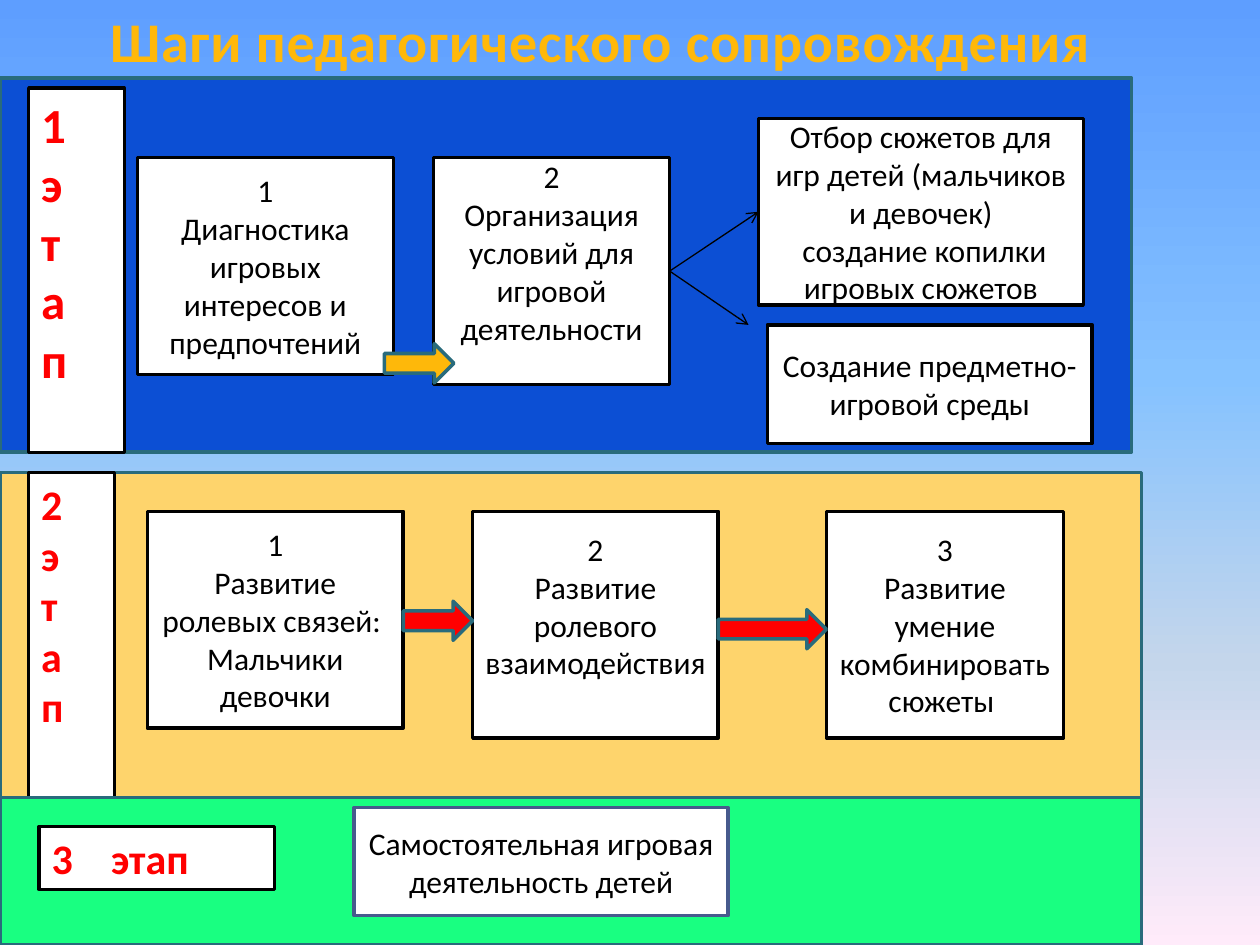
from lxml.etree import SubElement
from pptx import Presentation
from pptx.dml.color import RGBColor
from pptx.enum.shapes import MSO_CONNECTOR, MSO_SHAPE
from pptx.enum.text import MSO_ANCHOR as Anchor, MSO_AUTO_SIZE as AutoSize, PP_ALIGN as Align
from pptx.oxml.ns import qn
from pptx.util import Cm, Pt

FONT = "Calibri"
WHITE, BLACK, RED = "FFFFFF", "000000", "FF0000"
TEAL, AMBER = "296B7C", "FEB80A"
ROW_1, ROW_2 = 3.18, 10.31  # tops of the step rows
ARROW_HEIGHT = 0.79
RIGHT, LEFT = 3, 1  # connection sites


def color(hex_string):
    return RGBColor.from_string(hex_string)


def set_gradient(fill, owner, stops):
    """Vertical gradient with any number of (percent, colour) stops."""
    fill.gradient()
    fill.gradient_angle = 270
    stop_list = next(owner.iter(qn("a:gsLst")))
    for stop in list(stop_list):
        stop_list.remove(stop)
    for percent, value in stops:
        stop = SubElement(stop_list, qn("a:gs"), pos=str(percent * 1000))
        SubElement(stop, qn("a:srgbClr"), val=value)


def format_text(paragraph, size, value, bold=False):
    for run in paragraph.runs:
        run.font.name = FONT
        run.font.size = Pt(size)
        run.font.bold = bold
        run.font.color.rgb = color(value)


def add_block(slide, place, fill, line, kind=MSO_SHAPE.RECTANGLE):
    block = slide.shapes.add_shape(kind, *map(Cm, place))
    block.shadow.inherit = False
    block.fill.solid()
    block.fill.fore_color.rgb = color(fill)
    block.line.color.rgb = color(line)
    block.line.width = Pt(2)
    return block


def add_step(slide, place, lines, line=BLACK, bottom=0.13):
    """White box with centred lines; a larger bottom inset lifts the text."""
    step = add_block(slide, place, WHITE, line)
    frame = step.text_frame
    frame.word_wrap = True
    frame.vertical_anchor = Anchor.MIDDLE
    frame.margin_bottom = Cm(bottom)
    frame.text = "\n".join(lines)
    for paragraph in frame.paragraphs:
        paragraph.alignment = Align.CENTER
        format_text(paragraph, 18, BLACK)
    return step


def add_stage_label(slide, place, text, size, stacked=True):
    label = add_block(slide, place, WHITE, BLACK)
    frame = label.text_frame
    frame.word_wrap = True
    frame.auto_size = AutoSize.SHAPE_TO_FIT_TEXT
    frame.vertical_anchor = Anchor.TOP
    frame.text = text
    paragraph = frame.paragraphs[0]
    paragraph.alignment = Align.LEFT
    format_text(paragraph, size, RED, bold=True)
    if stacked:
        next(label.element.iter(qn("a:bodyPr"))).set("vert", "wordArtVert")
    else:
        properties = next(label.element.iter(qn("a:pPr")))
        tabs = SubElement(properties, qn("a:tabLst"))
        SubElement(tabs, qn("a:tab"), pos=str(Cm(1.2)), algn="l")


def add_step_arrow(slide, left, top, width, fill):
    add_block(slide, (left, top, width, ARROW_HEIGHT), fill, TEAL, MSO_SHAPE.RIGHT_ARROW)


def add_branch(slide, source, end_x, end_y, target=None):
    branch = slide.shapes.add_connector(
        MSO_CONNECTOR.STRAIGHT, source.left + source.width,
        source.top + source.height // 2, Cm(end_x), Cm(end_y))
    branch.begin_connect(source, RIGHT)
    if target is not None:
        branch.end_connect(target, LEFT)
    branch.line.color.rgb = color(BLACK)
    branch.line.width = Pt(0.75)
    properties = branch.element.spPr
    SubElement(properties.find(qn("a:ln")), qn("a:tailEnd"), type="arrow")
    SubElement(properties, qn("a:effectLst"))


def add_title(slide):
    title = slide.shapes.add_textbox(Cm(0), Cm(0), Cm(24.21), Cm(1.63))
    frame = title.text_frame
    frame.word_wrap = True
    frame.auto_size = AutoSize.SHAPE_TO_FIT_TEXT
    frame.text = "Шаги педагогического сопровождения"
    paragraph = frame.paragraphs[0]
    paragraph.alignment = Align.CENTER
    format_text(paragraph, 32, AMBER, bold=True)
    run = paragraph.runs[0]
    set_gradient(run.font.fill, title.element, [(25, "FFB809"), (100, "BB8500")])
    next(title.element.iter(qn("a:rPr"))).set("spc", "50")


def add_stage_1(slide):
    add_block(slide, (0, 1.57, 22.81, 7.54), "0C4FD4", TEAL)
    add_title(slide)
    add_step(slide, (2.77, ROW_1, 5.16, 4.37),
             ["1", "Диагностика игровых интересов и предпочтений"])
    conditions = add_step(slide, (8.74, ROW_1, 4.76, 4.57),
                          ["2", "Организация условий для игровой деятельности"], bottom=0.9)
    plots = add_step(slide, (15.29, 2.39, 6.55, 3.76),
                     ["Отбор сюжетов для игр детей (мальчиков и девочек)",
                      " создание копилки игровых сюжетов"])
    add_step(slide, (15.47, 6.55, 6.55, 2.39), ["Создание предметно-игровой среды"])
    add_branch(slide, conditions, 15.29, 4.27, plots)
    add_branch(slide, conditions, 15.09, 6.55)
    add_step_arrow(slide, 7.75, 6.93, 1.4, AMBER)
    add_stage_label(slide, (0.58, 1.78, 1.93, 7.34), "1этап", 28)


def add_stage_2(slide):
    add_block(slide, (0, 9.53, 23.01, 6.55), "FED46C", TEAL)
    add_stage_label(slide, (0.58, 9.53, 1.73, 6.55), "2этап", 24)
    add_step(slide, (2.97, ROW_2, 5.16, 4.37),
             ["1", "Развитие ролевых связей: ", "Мальчики", "девочки"])
    add_step(slide, (9.53, ROW_2, 4.95, 4.57),
             ["2", "Развитие ролевого взаимодействия"], bottom=0.9)
    add_step(slide, (16.66, ROW_2, 4.78, 4.57),
             ["3", "Развитие умение комбинировать сюжеты "])
    add_step_arrow(slide, 14.48, 12.29, 2.18, RED)
    add_step_arrow(slide, 8.13, 12.12, 1.4, RED)


def add_stage_3(slide):
    add_block(slide, (0, 16.08, 23.01, 2.97), "19FF81", TEAL)
    add_stage_label(slide, (0.79, 16.66, 4.75, 1.27), "3\tэтап", 24, stacked=False)
    add_step(slide, (7.14, 16.28, 7.54, 2.18),
             ["Самостоятельная игровая деятельность детей"], line="475A8D")


def main():
    deck = Presentation()
    deck.slide_width, deck.slide_height = Cm(25.4), Cm(19.05)
    slide = deck.slides.add_slide(deck.slide_layouts[6])

    # Sky background
    set_gradient(slide.background.fill, slide.element,
                 [(0, "5E9EFF"), (40, "85C2FF"), (70, "C4D6EB"), (100, "FFEBFA")])

    # Three stages from top to bottom
    add_stage_1(slide)
    add_stage_2(slide)
    add_stage_3(slide)
    deck.save("out.pptx")


if __name__ == "__main__":
    main()
